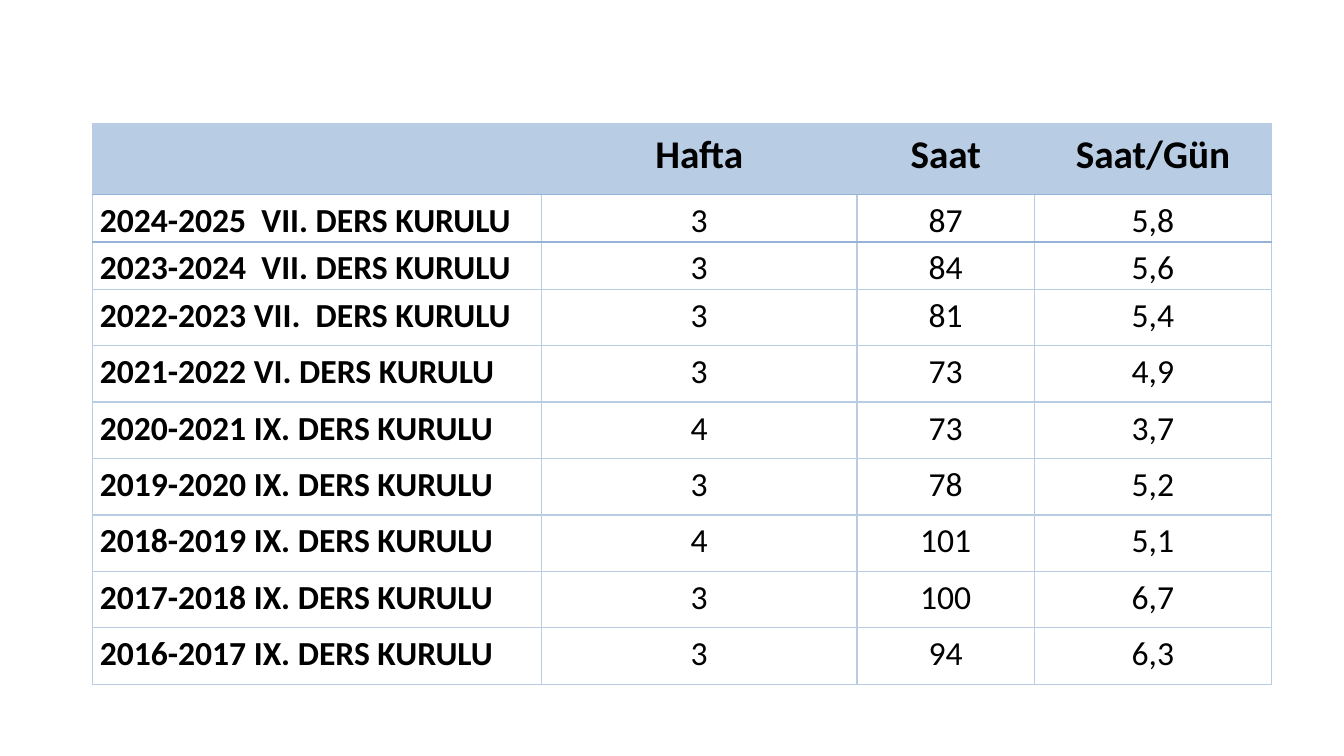
from dataclasses import dataclass

from lxml import etree
from pptx import Presentation
from pptx.dml.color import RGBColor
from pptx.enum.text import MSO_ANCHOR, PP_ALIGN
from pptx.oxml.ns import qn
from pptx.table import _Cell
from pptx.util import Emu, Pt

CENTER, JUSTIFY = PP_ALIGN.CENTER, PP_ALIGN.JUSTIFY
TOP = MSO_ANCHOR.TOP

EMU_PER_PX = 9144  # 100 px to the inch
FONT = "Calibri"
BLACK = "000000"
LIGHT_BLUE = "B8CCE4"
MID_BLUE = "95B3D7"

TABLE_LEFT, TABLE_TOP = 92, 123
COLUMN_WIDTHS = [445, 313, 176, 235]
HEADER_HEIGHT, TIGHT_HEIGHT, ROW_HEIGHT = 70, 47, 56
TIGHT_ROWS = 2
CELL_MARGIN = 7


@dataclass(frozen=True)
class Committee:
    name: str
    weeks: str
    hours: str
    hours_per_day: str


@dataclass(frozen=True)
class Border:
    color: str
    width: float


THIN = Border(LIGHT_BLUE, 1)
STRONG = Border(MID_BLUE, 1.5)

HEADER = Committee("", "Hafta", "Saat", "Saat/Gün")
COMMITTEES = [
    Committee("2024-2025  VII. DERS KURULU", "3", "87", "5,8"),
    Committee("2023-2024  VII. DERS KURULU", "3", "84", "5,6"),
    Committee("2022-2023 VII.  DERS KURULU", "3", "81", "5,4"),
    Committee("2021-2022 VI. DERS KURULU", "3", "73", "4,9"),
    Committee("2020-2021 IX. DERS KURULU", "4", "73", "3,7"),
    Committee("2019-2020 IX. DERS KURULU", "3", "78", "5,2"),
    Committee("2018-2019 IX. DERS KURULU", "4", "101", "5,1"),
    Committee("2017-2018 IX. DERS KURULU", "3", "100", "6,7"),
    Committee("2016-2017 IX. DERS KURULU", "3", "94", "6,3"),
]


def px(length: int) -> Emu:
    return Emu(length * EMU_PER_PX)


def color(value: str) -> RGBColor:
    return RGBColor.from_string(value)


def set_borders(cell: _Cell, top: Border, bottom: Border) -> None:
    """Draw all four sides; left and right are always thin."""
    properties = cell._tc.get_or_add_tcPr()
    sides = {"a:lnL": THIN, "a:lnR": THIN, "a:lnT": top, "a:lnB": bottom}
    for tag, border in sides.items():
        line = etree.SubElement(properties, qn(tag), w=str(Pt(border.width)))
        fill = etree.SubElement(line, qn("a:solidFill"))
        etree.SubElement(fill, qn("a:srgbClr"), val=border.color)


def write_cell(cell: _Cell, text: str, size: int, bold: bool, alignment: PP_ALIGN) -> None:
    cell.margin_left = cell.margin_right = px(CELL_MARGIN)
    cell.margin_top = cell.margin_bottom = 0
    cell.vertical_anchor = TOP
    if not text:
        return
    paragraph = cell.text_frame.paragraphs[0]
    paragraph.alignment = alignment
    paragraph.line_spacing = 1.15
    run = paragraph.add_run()
    run.text = text
    run.font.name = FONT
    run.font.size = Pt(size)
    run.font.bold = bold
    run.font.color.rgb = color(BLACK)


def row_height(row: int) -> int:
    if row == 0:
        return HEADER_HEIGHT
    return TIGHT_HEIGHT if row <= TIGHT_ROWS else ROW_HEIGHT


def row_edge(edge: int) -> Border:
    """Border above the row with this index."""
    return STRONG if edge in (1, 2) else THIN


def main() -> None:
    presentation = Presentation()
    presentation.slide_width, presentation.slide_height = px(1333), px(750)
    slide = presentation.slides.add_slide(presentation.slide_layouts[6])

    rows = [HEADER, *COMMITTEES]
    heights = [row_height(row) for row in range(len(rows))]
    table = slide.shapes.add_table(
        len(rows), len(COLUMN_WIDTHS), px(TABLE_LEFT), px(TABLE_TOP),
        px(sum(COLUMN_WIDTHS)), px(sum(heights)),
    ).table
    table.first_row = table.horz_banding = False
    for column, width in zip(table.columns, COLUMN_WIDTHS):
        column.width = px(width)

    for row, committee in enumerate(rows):
        table.rows[row].height = px(heights[row])
        is_header = row == 0
        values = [committee.name, committee.weeks, committee.hours, committee.hours_per_day]
        for column, text in enumerate(values):
            cell = table.cell(row, column)
            is_name = column == 0
            write_cell(cell, text, 28 if is_header else 24, is_header or is_name,
                       JUSTIFY if is_name else CENTER)
            set_borders(cell, row_edge(row), row_edge(row + 1))
            if is_header:
                cell.fill.solid()
                cell.fill.fore_color.rgb = color(LIGHT_BLUE)
            else:
                cell.fill.background()

    presentation.save("out.pptx")


if __name__ == "__main__":
    main()
